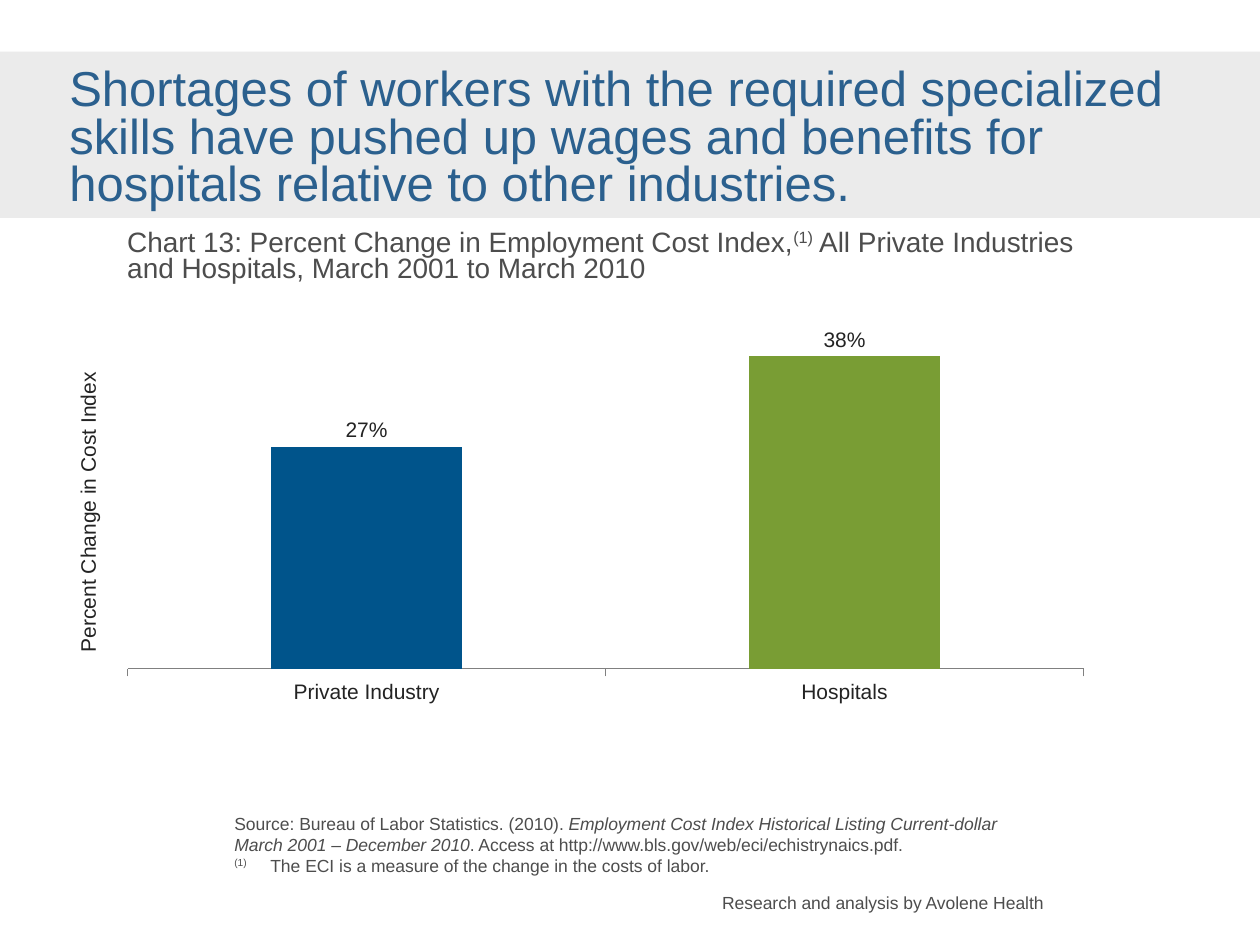
from dataclasses import dataclass

from lxml.etree import SubElement
from pptx import Presentation
from pptx.chart.data import CategoryChartData
from pptx.dml.color import RGBColor
from pptx.enum.chart import XL_CHART_TYPE, XL_LABEL_POSITION, XL_TICK_MARK
from pptx.enum.shapes import MSO_SHAPE
from pptx.enum.text import MSO_ANCHOR, MSO_AUTO_SIZE, PP_ALIGN
from pptx.oxml import parse_xml
from pptx.oxml.ns import nsdecls, qn
from pptx.util import Pt

FONT = "Arial"
BAND = RGBColor(0xEB, 0xEB, 0xEB)
TITLE_BLUE = RGBColor(0x2B, 0x60, 0x8E)
GREY = RGBColor(0x4D, 0x4D, 0x4D)
INK = RGBColor(0x23, 0x23, 0x23)
AXIS_GREY = RGBColor(0x80, 0x80, 0x80)
BAR_COLOURS = (RGBColor(0x00, 0x54, 0x8B), RGBColor(0x79, 0x9D, 0x34))


@dataclass
class Area:
    """Left, top, width and height in points."""
    left: float
    top: float
    width: float
    height: float

    def lengths(self) -> list[Pt]:
        return [Pt(n) for n in (self.left, self.top, self.width, self.height)]


@dataclass
class Span:
    text: str
    italic: bool = False
    raised: bool = False


@dataclass
class Para:
    spans: list[Span]
    tab: float | None = None


@dataclass
class Style:
    size: float
    colour: RGBColor
    line_spacing: float | None = None
    margins: tuple[float, float] = (0, 0)  # sides, top and bottom


def write_text(box, paras: list[Para], style: Style) -> None:
    frame = box.text_frame
    frame.word_wrap = True
    frame.auto_size = MSO_AUTO_SIZE.SHAPE_TO_FIT_TEXT
    frame.vertical_anchor = MSO_ANCHOR.TOP
    sides, ends = style.margins
    frame.margin_left = frame.margin_right = Pt(sides)
    frame.margin_top = frame.margin_bottom = Pt(ends)
    for index, item in enumerate(paras):
        para = frame.add_paragraph() if index else frame.paragraphs[0]
        para.alignment = PP_ALIGN.LEFT
        if style.line_spacing:
            para.line_spacing = style.line_spacing
        if item.tab:
            tabs = SubElement(para._p.get_or_add_pPr(), qn("a:tabLst"))
            SubElement(tabs, qn("a:tab"), pos=str(Pt(item.tab)), algn="l")
        for part in item.spans:
            span = para.add_run()
            span.text = part.text
            span.font.name = FONT
            span.font.size = Pt(style.size)
            span.font.color.rgb = style.colour
            span.font.italic = part.italic
            if part.raised:
                span._r.get_or_add_rPr().set("baseline", "30000")


def add_text(page, area: Area, paras: list[Para], style: Style):
    box = page.shapes.add_textbox(*area.lengths())
    write_text(box, paras, style)
    return box


def add_cost_chart(page, area: Area) -> None:
    data = CategoryChartData(number_format="0%")
    data.categories = ["Private Industry", "Hospitals"]
    data.add_series("Series 1", [0.27, 0.38])
    chart = page.shapes.add_chart(XL_CHART_TYPE.COLUMN_CLUSTERED, *area.lengths(), data).chart
    chart.has_legend = chart.has_title = False
    chart.font.name = FONT
    chart.font.size = Pt(18)
    chart.font.color.rgb = INK

    # Axes
    values = chart.value_axis
    values.minimum_scale, values.maximum_scale = 0, 0.4
    values.has_major_gridlines = False
    values.visible = False
    categories = chart.category_axis
    categories.major_tick_mark = XL_TICK_MARK.OUTSIDE
    categories.tick_labels.font.size = Pt(12)
    categories.format.line.color.rgb = AXIS_GREY
    categories.format.line.width = Pt(0.75)

    # Bars and their labels
    plot = chart.plots[0]
    plot.vary_by_categories = False
    plot.gap_width = 150
    series = plot.series[0]
    series.format.fill.solid()
    series.format.fill.fore_color.rgb = BAR_COLOURS[0]
    hospitals = series.points[1].format.fill
    hospitals.solid()
    hospitals.fore_color.rgb = BAR_COLOURS[1]
    labels = series.data_labels
    labels.show_value = True
    labels.number_format = "0%"
    labels.number_format_is_linked = False
    labels.position = XL_LABEL_POSITION.OUTSIDE_END
    labels.font.size = Pt(12)
    labels.font.name = FONT
    labels.font.color.rgb = INK

    # Fixed inner plot area, as fractions of the chart
    plot_area = chart._chartSpace.chart.plotArea
    for old in plot_area.findall(qn("c:layout")):
        plot_area.remove(old)
    fractions = {"x": 0.017, "y": 0.042, "w": 0.899, "h": 0.799}
    modes = "".join(f'<c:{axis}Mode val="edge"/>' for axis in "xy")
    sizes = "".join(f'<c:{key} val="{value}"/>' for key, value in fractions.items())
    plot_area.insert(0, parse_xml(
        f'<c:layout {nsdecls("c")}><c:manualLayout><c:layoutTarget val="inner"/>'
        f"{modes}{sizes}</c:manualLayout></c:layout>"))


def main() -> None:
    deck = Presentation()
    deck.slide_width, deck.slide_height = Pt(720), Pt(540)
    page = deck.slides.add_slide(deck.slide_layouts[5])
    small = Style(10, GREY)

    # Title on its band
    band = page.shapes.add_shape(MSO_SHAPE.RECTANGLE, *Area(0, 29.5, 720, 95).lengths())
    band.shadow.inherit = False
    band.fill.solid()
    band.fill.fore_color.rgb = BAND
    band.line.fill.background()
    title = page.shapes.title
    title.left, title.top, title.width, title.height = Area(39.6, 39.6, 648, 81.4).lengths()
    write_text(title, [Para([Span(
        "Shortages of workers with the required specialized skills have pushed up "
        "wages and benefits for hospitals relative to other industries.")])],
        Style(28, TITLE_BLUE, 0.8))
    page.shapes._spTree.append(title._element)  # bring in front of the band

    # Chart with its heading and axis title
    add_text(page, Area(72.7, 131.8, 566, 31), [Para([
        Span("Chart 13: Percent Change in Employment Cost Index,"),
        Span("(1)", raised=True),
        Span(" All Private Industries and Hospitals, March 2001 to March 2010")])],
        Style(16, GREY, 0.8))
    add_cost_chart(page, Area(62.6, 184.3, 607.7, 235.4))
    axis_title = add_text(page, Area(-45.4, 273.6, 190.8, 21.6),
                          [Para([Span("Percent Change in Cost Index")])],
                          Style(12, INK, margins=(7.2, 3.6)))
    axis_title.rotation = 270

    # Source, footnote and credit
    add_text(page, Area(133.9, 464.4, 442, 36), [
        Para([Span("Source: Bureau of Labor Statistics. (2010). "),
              Span("Employment Cost Index Historical Listing Current-dollar "
                   "March 2001 – December 2010", italic=True),
              Span(". Access at http://www.bls.gov/web/eci/echistrynaics.pdf.")]),
        Para([Span("(1)\t", raised=True),
              Span(" The ECI is a measure of the change in the costs of labor.")], tab=18),
    ], small)
    add_text(page, Area(412.6, 509.8, 190, 12.2),
             [Para([Span("Research and analysis by Avolene Health")])], small)

    deck.save("out.pptx")


if __name__ == "__main__":
    main()
